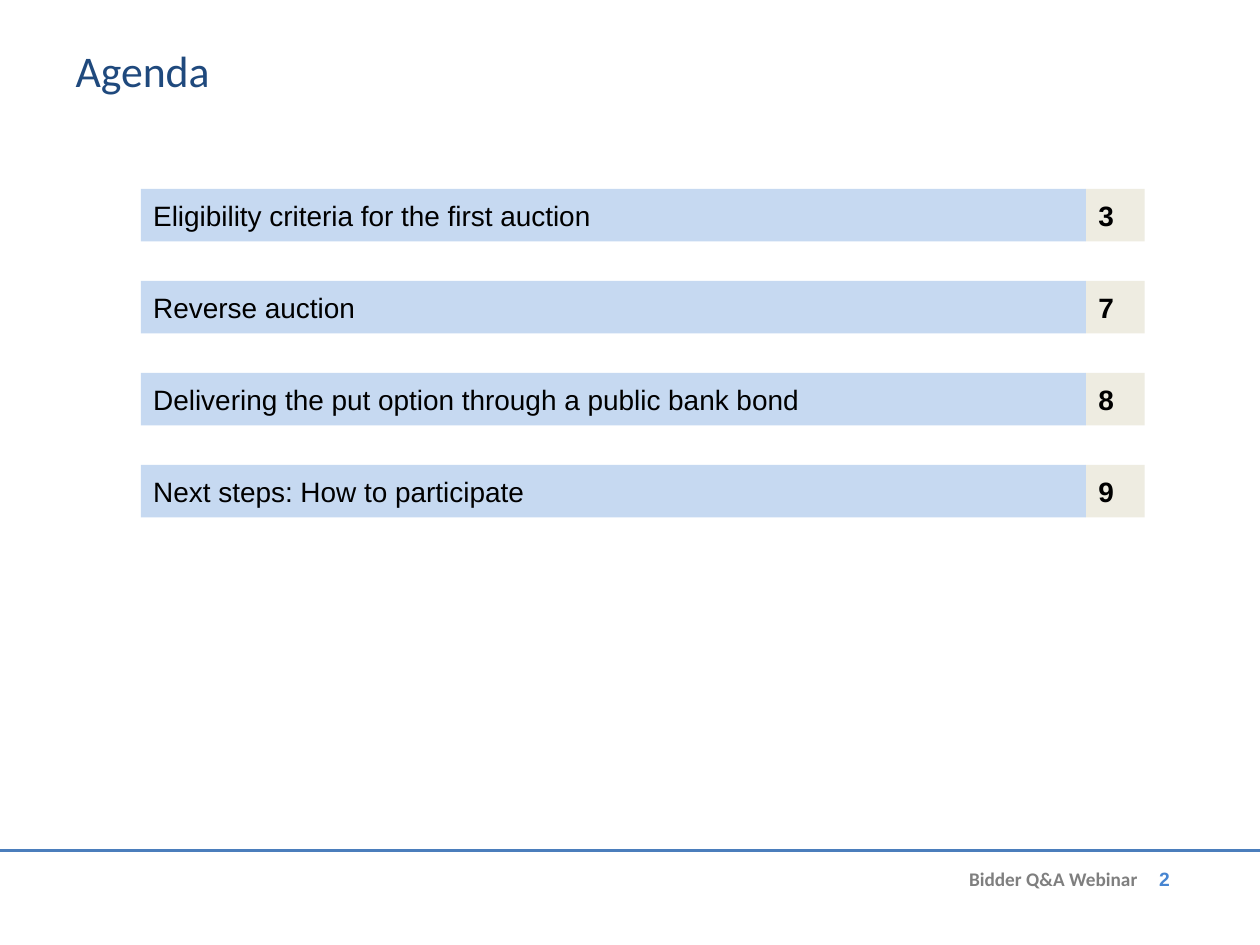
from lxml import etree
from pptx import Presentation
from pptx.dml.color import RGBColor
from pptx.enum.shapes import MSO_CONNECTOR as Connector, MSO_SHAPE as Shape
from pptx.enum.text import MSO_ANCHOR as Anchor, MSO_AUTO_SIZE as AutoSize, PP_ALIGN as Align
from pptx.oxml.ns import qn
from pptx.util import Pt

COLORS = {
    "title": "1F497D",
    "bar": "C6D9F1",
    "page_cell": "EEECE1",
    "text": "000000",
    "rule": "4B7EBC",
    "footer": "7F7F7F",
    "page_number": "4785D1",
}

AGENDA = [
    ("Eligibility criteria for the first auction", "3"),
    ("Reverse auction", "7"),
    ("Delivering the put option through a public bank bond", "8"),
    ("Next steps: How to participate", "9"),
]


class AgendaPage:
    def __init__(self, deck):
        self.page = deck.slides.add_slide(deck.slide_layouts[5])

    def color(self, name):
        return RGBColor.from_string(COLORS[name])

    def fill_text(self, frame, text, size, font, color, bold=False, align=Align.LEFT, anchor=Anchor.TOP):
        frame.word_wrap = True
        frame.auto_size = AutoSize.NONE
        frame.vertical_anchor = anchor
        para = frame.paragraphs[0]
        para.alignment = align
        span = para.add_run()
        span.text = text
        span.font.size = Pt(size)
        span.font.name = font
        span.font.bold = bold
        span.font.color.rgb = self.color(color)

    def title(self, text, left, top, width, height):
        box = self.page.shapes.title
        box.left, box.top, box.width, box.height = Pt(left), Pt(top), Pt(width), Pt(height)
        self.fill_text(box.text_frame, text, 25, "Calibri", "title")

    def label(self, text, left, top, width, height, font, color, align=Align.LEFT):
        box = self.page.shapes.add_textbox(Pt(left), Pt(top), Pt(width), Pt(height))
        self.fill_text(box.text_frame, text, 11, font, color, True, align)

    def bar(self, text, left, top, width, height, fill, bold=False):
        box = self.page.shapes.add_shape(Shape.RECTANGLE, Pt(left), Pt(top), Pt(width), Pt(height))
        box.shadow.inherit = False
        box.fill.solid()
        box.fill.fore_color.rgb = self.color(fill)
        box.line.fill.background()
        self.fill_text(box.text_frame, text, 16, "Arial", "text", bold, anchor=Anchor.MIDDLE)

    def rule(self, left, top, right):
        line = self.page.shapes.add_connector(Connector.STRAIGHT, Pt(left), Pt(top), Pt(right), Pt(top))
        line.line.color.rgb = self.color("rule")
        line.line.width = Pt(1.5)
        etree.SubElement(line._element.spPr, qn("a:effectLst"))


def main():
    deck = Presentation()
    deck.slide_width, deck.slide_height = Pt(720), Pt(540)
    agenda = AgendaPage(deck)

    agenda.rule(0, 486, 720)
    agenda.label("Bidder Q&A Webinar", 246.2, 491.8, 411, 21, "Calibri", "footer", Align.RIGHT)
    agenda.label("2", 655.2, 491.8, 32, 25, "Arial", "page_number")
    agenda.title("Agenda", 36, 21.6, 628.6, 37.4)

    left, width, height, pitch = 80.5, 540, 30, 52.56
    for row, (topic, number) in enumerate(AGENDA):
        top = 108 + row * pitch
        agenda.bar(number, left + width, top, 33.6, height, "page_cell", True)
        agenda.bar(topic, left, top, width, height, "bar")

    deck.save("out.pptx")


if __name__ == "__main__":
    main()
